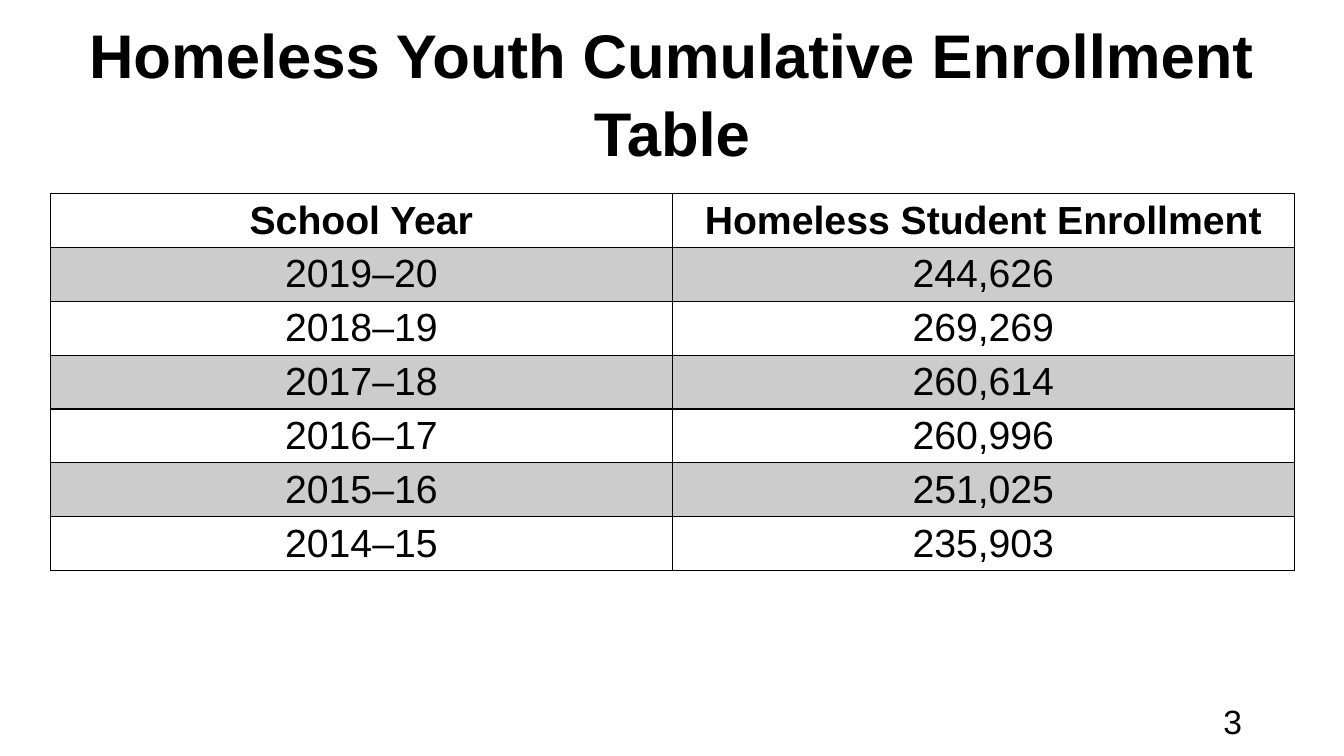
"""Build the slide with the homeless youth enrollment table."""
from pptx import Presentation
from pptx.dml.color import RGBColor
from pptx.enum.text import MSO_ANCHOR as Anchor, PP_ALIGN as Align
from pptx.oxml import parse_xml
from pptx.oxml.ns import nsdecls
from pptx.util import Pt

TITLE = "Homeless Youth Cumulative Enrollment Table"
ROWS = [
    ("School Year", "Homeless Student Enrollment"),
    ("2019–20", "244,626"),
    ("2018–19", "269,269"),
    ("2017–18", "260,614"),
    ("2016–17", "260,996"),
    ("2015–16", "251,025"),
    ("2014–15", "235,903"),
]
NUMBER = "3"
FONT = "Arial"
BLACK = RGBColor(0, 0, 0)
WIDE, HIGH = 960, 540
LEFT, TOP, COL, ROW = 36, 138.24, 444.24, 38.48


def write(frame, text, size, bold=False, align=Align.CENTER):
    """Put one formatted paragraph in a text frame."""
    frame.text = text
    frame.word_wrap = True
    para = frame.paragraphs[0]
    para.alignment = align
    font = para.font
    font.name, font.size, font.bold = FONT, Pt(size), bold
    font.color.rgb = BLACK


def border(cell):
    """Draw a thin black line on every side of a cell."""
    props = cell._tc.get_or_add_tcPr()
    for spot, side in enumerate(("lnL", "lnR", "lnT", "lnB")):
        props.insert(spot, parse_xml(
            f'<a:{side} {nsdecls("a")} w="{Pt(1)}"><a:solidFill>'
            f'<a:srgbClr val="{BLACK}"/></a:solidFill></a:{side}>'))


def shade(cell):
    """Fill a cell with black at one fifth opacity."""
    cell.fill.solid()
    cell.fill.fore_color.rgb = BLACK
    color = cell._tc.tcPr.find(".//{*}solidFill/{*}srgbClr")
    color.append(parse_xml(f'<a:alpha {nsdecls("a")} val="20000"/>'))


def main():
    """Build and save the slide."""
    deck = Presentation()
    deck.slide_width, deck.slide_height = Pt(WIDE), Pt(HIGH)
    slide = deck.slides.add_slide(deck.slide_layouts[5])

    title = slide.shapes.title
    title.left, title.top = Pt(0), Pt(0)
    title.width, title.height = Pt(WIDE), Pt(129.6)
    write(title.text_frame, TITLE, 44, True)
    title.text_frame.vertical_anchor = Anchor.MIDDLE
    title.text_frame.paragraphs[0].line_spacing = 1.05

    count = len(ROWS)
    table = slide.shapes.add_table(
        count, 2, Pt(LEFT), Pt(TOP), Pt(2 * COL), Pt(count * ROW)).table
    table.horz_banding = False
    for r, row in enumerate(ROWS):
        table.rows[r].height = Pt(ROW)
        for c, text in enumerate(row):
            cell = table.cell(r, c)
            cell.margin_top = cell.margin_bottom = Pt(3)
            cell.vertical_anchor = Anchor.MIDDLE
            write(cell.text_frame, text, 28, r == 0)
            if r % 2:
                shade(cell)
            else:
                cell.fill.background()
            border(cell)

    box = slide.shapes.add_textbox(Pt(678.24), Pt(500.4), Pt(216), Pt(28.8))
    write(box.text_frame, NUMBER, 24, align=Align.RIGHT)
    box.text_frame.vertical_anchor = Anchor.MIDDLE

    deck.save("out.pptx")


if __name__ == "__main__":
    main()
